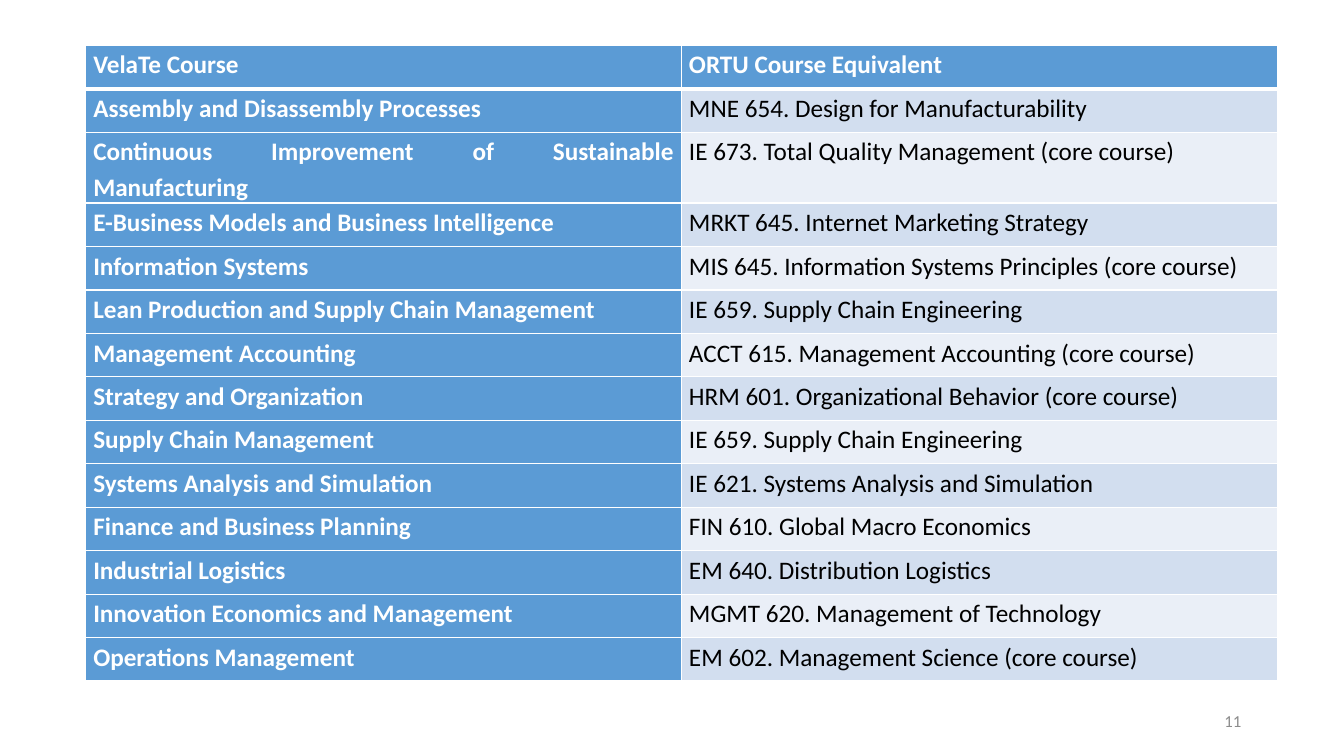
from pptx import Presentation
from pptx.dml.color import RGBColor
from pptx.enum.text import MSO_ANCHOR, PP_ALIGN
from pptx.oxml import parse_xml
from pptx.oxml.ns import nsdecls
from pptx.util import Inches, Pt

HUES = {"white": "FFFFFF", "black": "000000", "blue": "5B9BD5",
        "pale": "D2DEEF", "mist": "EAEFF7", "gray": "8C8C8C"}

COURSES = [
    ("VelaTe Course", "ORTU Course Equivalent"),
    ("Assembly and Disassembly Processes", "MNE 654. Design for Manufacturability"),
    ("Continuous Improvement of Sustainable Manufacturing",
     "IE 673. Total Quality Management (core course)"),
    ("E-Business Models and Business Intelligence", "MRKT 645. Internet Marketing Strategy"),
    ("Information Systems", "MIS 645. Information Systems Principles (core course)"),
    ("Lean Production and Supply Chain Management", "IE 659. Supply Chain Engineering"),
    ("Management Accounting", "ACCT 615. Management Accounting (core course)"),
    ("Strategy and Organization", "HRM 601. Organizational Behavior (core course)"),
    ("Supply Chain Management", "IE 659. Supply Chain Engineering"),
    ("Systems Analysis and Simulation", "IE 621. Systems Analysis and Simulation"),
    ("Finance and Business Planning", "FIN 610. Global Macro Economics"),
    ("Industrial Logistics", "EM 640. Distribution Logistics"),
    ("Innovation Economics and Management", "MGMT 620. Management of Technology"),
    ("Operations Management", "EM 602. Management Science (core course)"),
]
TALL = 2  # row of the course name that wraps


def color(name):
    return RGBColor.from_string(HUES[name])


def write(frame, text, size=18, hue="black", bold=False, align=PP_ALIGN.JUSTIFY, line=1.15):
    para = frame.paragraphs[0]
    para.alignment, para.line_spacing = align, line
    run = para.add_run()
    run.text = text
    font = run.font
    font.name, font.size, font.bold = "Calibri", Pt(size), bold
    font.color.rgb = color(hue)


def edge(cell, side, width):
    """Draw a white border on one side: L, R, T or B, in that order."""
    cell._tc.get_or_add_tcPr().append(parse_xml(
        f'<a:ln{side} {nsdecls("a")} w="{Pt(width)}"><a:solidFill>'
        f'<a:srgbClr val="{HUES["white"]}"/></a:solidFill></a:ln{side}>'))


class Deck:
    def __init__(self):
        self.show = Presentation()
        self.show.slide_width, self.show.slide_height = Inches(13.33), Inches(7.5)
        self.slide = self.show.slides.add_slide(self.show.slide_layouts[6])

    def across(self, share):
        """Turn a percentage of the slide's width into a length."""
        return round(self.show.slide_width * share / 100)

    def down(self, share):
        """Turn a percentage of the slide's height into a length."""
        return round(self.show.slide_height * share / 100)

    def box(self, left, top, width, height):
        return self.across(left), self.down(top), self.across(width), self.down(height)

    def table(self, rows, left, top, width, step, tall):
        """Add a table whose rows are one step high, but for the TALL one."""
        high = step * (len(rows) - 1) + tall
        grid = self.slide.shapes.add_table(
            len(rows), len(rows[0]), *self.box(left, top, width, high)).table
        for r, texts in enumerate(rows):
            grid.rows[r].height = self.down(tall if r == TALL else step)
            for c, text in enumerate(texts):
                self.cell(grid.cell(r, c), text, r, c)

    def cell(self, cell, text, r, c):
        head = r == 0 or c == 0
        cell.margin_left = cell.margin_right = Pt(5.4)
        cell.margin_top = cell.margin_bottom = 0
        write(cell.text_frame, text, hue="white" if head else "black", bold=head)
        for side in "LRTB":
            thick = (r, side) in ((0, "B"), (1, "T"))
            edge(cell, side, 3 if thick else 1)
        cell.fill.solid()
        cell.fill.fore_color.rgb = color("blue" if head else "pale" if r % 2 else "mist")

    def label(self, text, left, top, width, height, **style):
        frame = self.slide.shapes.add_textbox(*self.box(left, top, width, height)).text_frame
        frame.word_wrap = True
        frame.vertical_anchor = MSO_ANCHOR.MIDDLE
        write(frame, text, **style)


def main():
    deck = Deck()
    deck.table(COURSES, left=6.38, top=6, width=88.65, step=5.75, tall=7.2)
    deck.label("11", 70.6, 92.67, 22.5, 5.33,
               size=12, hue="gray", align=PP_ALIGN.RIGHT, line=1)
    deck.show.save("out.pptx")


if __name__ == "__main__":
    main()
